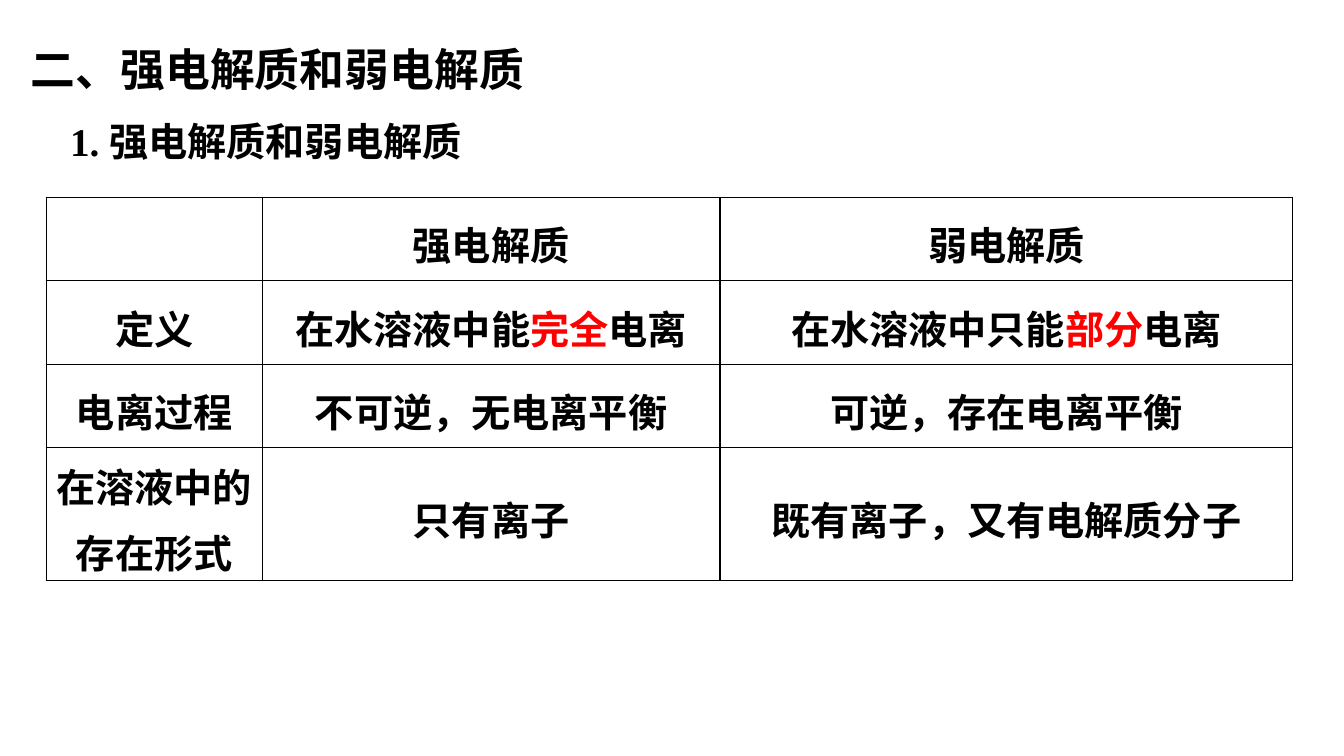
import pptx
import pptx.dml.color
import pptx.enum.text
import pptx.oxml
import pptx.oxml.ns
import pptx.util
from lxml import etree

Pt = pptx.util.Pt
CHINESE_FONT = "Noto Sans CJK SC"
LATIN_FONT = "Times New Roman"
BLACK, RED, WHITE = "000000", "FF0000", "FFFFFF"

# text, left, top, width, height, size, Latin font
HEADINGS = [
    ("二、强电解质和弱电解质", 15, 26.5, 437, 46, 32, CHINESE_FONT),
    ("1. 强电解质和弱电解质", 43, 80.5, 331, 41, 28, LATIN_FONT),
]

# Each cell is a list of paragraphs, each paragraph a list of (text, colour) runs.
ROWS = [
    [[], [[("强电解质", BLACK)]], [[("弱电解质", BLACK)]]],
    [
        [[("定义", BLACK)]],
        [[("在水溶液中能", BLACK), ("完全", RED), ("电离", BLACK)]],
        [[("在水溶液中只能", BLACK), ("部分", RED), ("电离", BLACK)]],
    ],
    [
        [[("电离过程", BLACK)]],
        [[("不可逆，无电离平衡", BLACK)]],
        [[("可逆，存在电离平衡", BLACK)]],
    ],
    [
        [[("在溶液中的", BLACK)], [("存在形式", BLACK)]],
        [[("只有离子", BLACK)]],
        [[("既有离子，又有电解质分子", BLACK)]],
    ],
]
TABLE_LEFT, TABLE_TOP = 33, 141
COLUMN_WIDTHS = [154.3, 327, 409.2]
ROW_HEIGHTS = [59.6, 59.6, 59.6, 77]
TABLE_TEXT_SIZE = 28


def rgb(colour):
    return pptx.dml.color.RGBColor.from_string(colour)


def add_run(paragraph, text, size, colour, latin_font=CHINESE_FONT):
    run = paragraph.add_run()
    run.text = text
    run.font.size = Pt(size)
    run.font.bold = True
    run.font.color.rgb = rgb(colour)
    run.font.name = latin_font
    east_asian = etree.SubElement(run.font._element, pptx.oxml.ns.qn("a:ea"))
    east_asian.set("typeface", CHINESE_FONT)


def add_heading(slide, text, left, top, width, height, size, latin_font):
    box = slide.shapes.add_textbox(Pt(left), Pt(top), Pt(width), Pt(height))
    frame = box.text_frame
    frame.word_wrap = True
    frame.auto_size = pptx.enum.text.MSO_AUTO_SIZE.SHAPE_TO_FIT_TEXT
    add_run(frame.paragraphs[0], text, size, BLACK, latin_font)


def add_borders(cell):
    """Put a thin black line on all four sides, ahead of the cell's fill."""
    properties = cell._tc.get_or_add_tcPr()
    for index, side in enumerate(("lnL", "lnR", "lnT", "lnB")):
        properties.insert(index, pptx.oxml.parse_xml(
            f'<a:{side} {pptx.oxml.ns.nsdecls("a")} w="{Pt(1)}">'
            f'<a:solidFill><a:srgbClr val="{BLACK}"/></a:solidFill></a:{side}>'))


def fill_cell(cell, paragraphs):
    cell.fill.solid()
    cell.fill.fore_color.rgb = rgb(WHITE)
    add_borders(cell)
    cell.vertical_anchor = pptx.enum.text.MSO_ANCHOR.MIDDLE
    cell.margin_left = cell.margin_right = Pt(3.6)
    cell.margin_top = cell.margin_bottom = Pt(0)
    frame = cell.text_frame
    for index, runs in enumerate(paragraphs):
        paragraph = frame.add_paragraph() if index else frame.paragraphs[0]
        paragraph.alignment = pptx.enum.text.PP_ALIGN.CENTER
        paragraph.line_spacing = 1.17
        for text, colour in runs:
            add_run(paragraph, text, TABLE_TEXT_SIZE, colour)


def add_comparison_table(slide):
    table = slide.shapes.add_table(
        len(ROWS), len(COLUMN_WIDTHS), Pt(TABLE_LEFT), Pt(TABLE_TOP),
        Pt(sum(COLUMN_WIDTHS)), Pt(sum(ROW_HEIGHTS))).table
    table.first_row = table.horz_banding = False
    for column, width in zip(table.columns, COLUMN_WIDTHS):
        column.width = Pt(width)
    for row, height, contents in zip(table.rows, ROW_HEIGHTS, ROWS):
        row.height = Pt(height)
        for cell, paragraphs in zip(row.cells, contents):
            fill_cell(cell, paragraphs)


def main():
    presentation = pptx.Presentation()
    presentation.slide_width, presentation.slide_height = Pt(960), Pt(540)
    slide = presentation.slides.add_slide(presentation.slide_layouts[6])
    add_comparison_table(slide)
    for heading in HEADINGS:
        add_heading(slide, *heading)
    presentation.save("out.pptx")


if __name__ == "__main__":
    main()
